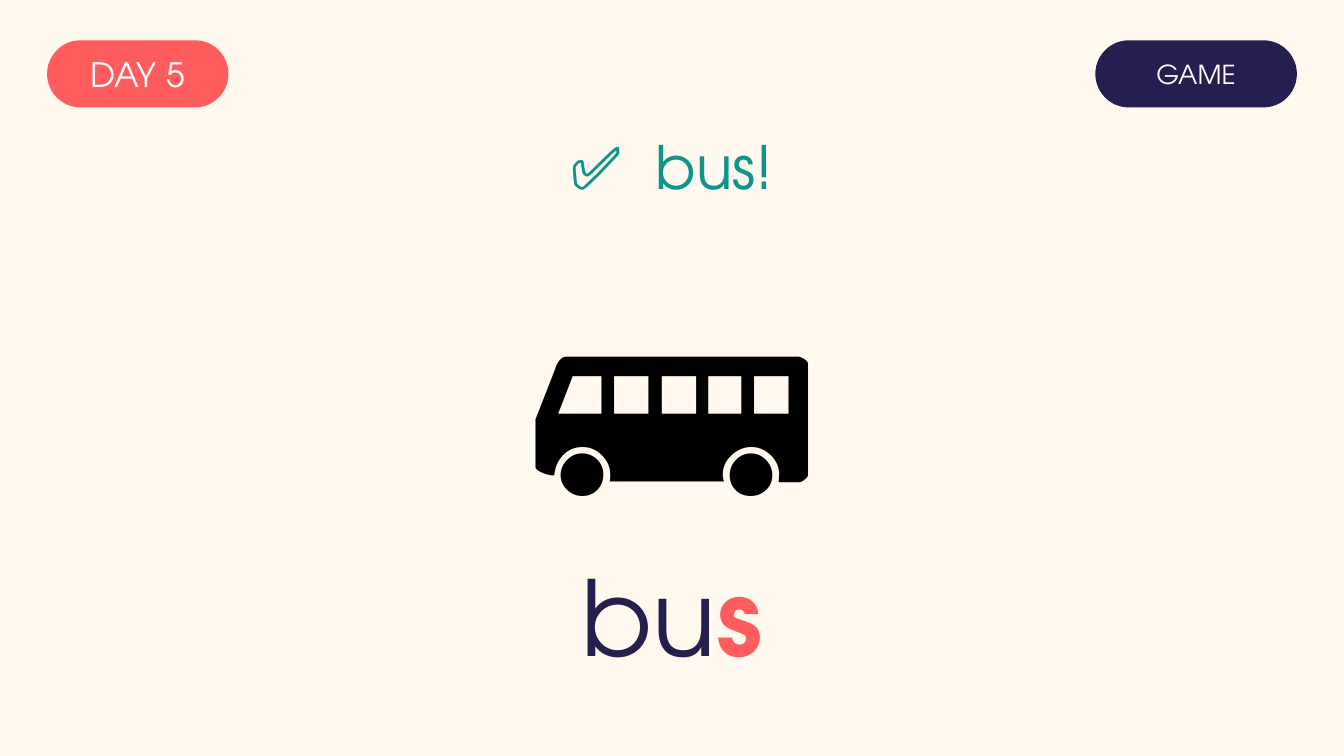
from dataclasses import dataclass

from pptx import Presentation
from pptx.dml.color import RGBColor
from pptx.enum.shapes import MSO_SHAPE
from pptx.enum.text import MSO_ANCHOR, PP_ALIGN
from pptx.slide import Slide
from pptx.text.text import TextFrame
from pptx.util import Emu, Pt

EMU_PER_PX = 4572  # 200 px to the inch
SLIDE_WIDTH, SLIDE_HEIGHT = 2000, 1125

CREAM = RGBColor(0xFF, 0xF9, 0xEF)
CORAL = RGBColor(0xFF, 0x5D, 0x5D)
NAVY = RGBColor(0x24, 0x1F, 0x4E)
TEAL = RGBColor(0x0E, 0x94, 0x88)
WHITE = RGBColor(0xFF, 0xFF, 0xFF)
BLACK = RGBColor(0x00, 0x00, 0x00)

HEADING_FONT = "TeX Gyre Adventor"
EMOJI_FONT = "Calibri"

ROUNDED = MSO_SHAPE.ROUNDED_RECTANGLE
TOP, MIDDLE = MSO_ANCHOR.TOP, MSO_ANCHOR.MIDDLE
CENTER = PP_ALIGN.CENTER


@dataclass(frozen=True)
class Span:
    text: str
    color: RGBColor
    bold: bool = False
    spacing: int = 0  # extra space after each letter, in hundredths of a point


@dataclass(frozen=True)
class Pill:
    left: int
    width: int
    label: str
    size: int
    fill: RGBColor


@dataclass(frozen=True)
class Line:
    """A centred line of text across the full slide width."""
    top: int
    height: int
    size: int
    spans: tuple[Span, ...]
    font: str = HEADING_FONT
    anchor: MSO_ANCHOR = MIDDLE


PILL_TOP, PILL_HEIGHT = 60, 100
PILLS = (
    Pill(70, 270, "DAY 5", 18, CORAL),
    Pill(1630, 300, "GAME", 14, NAVY),
)
LINES = (
    Line(184, 124, 32, (Span("✅", TEAL, spacing=900), Span(" bus!", TEAL))),
    Line(340, 420, 140, (Span("🚌", BLACK),), EMOJI_FONT, TOP),
    Line(830, 170, 56, (Span("bu", NAVY), Span("s", CORAL, bold=True))),
)


def px(length: int) -> Emu:
    return Emu(length * EMU_PER_PX)


def write_spans(frame: TextFrame, spans: tuple[Span, ...], font: str,
                size: int, anchor: MSO_ANCHOR) -> None:
    frame.word_wrap = True
    frame.vertical_anchor = anchor
    para = frame.paragraphs[0]
    para.alignment = CENTER
    para.font.name = font
    para.font.size = Pt(size)
    for span in spans:
        run = para.add_run()
        run.text = span.text
        run.font.name = font
        run.font.size = Pt(size)
        run.font.color.rgb = span.color
        run.font.bold = span.bold
        if span.spacing:
            run.font._element.set("spc", str(span.spacing))


def draw_pill(slide: Slide, pill: Pill) -> None:
    shape = slide.shapes.add_shape(ROUNDED, px(pill.left), px(PILL_TOP),
                                   px(pill.width), px(PILL_HEIGHT))
    shape.adjustments[0] = 0.5
    shape.shadow.inherit = False
    shape.fill.solid()
    shape.fill.fore_color.rgb = pill.fill
    shape.line.fill.background()
    frame = shape.text_frame
    frame.margin_left = frame.margin_right = 0
    frame.margin_top = frame.margin_bottom = 0
    write_spans(frame, (Span(pill.label, WHITE),), HEADING_FONT, pill.size, MIDDLE)


def draw_line(slide: Slide, line: Line) -> None:
    box = slide.shapes.add_textbox(0, px(line.top), px(SLIDE_WIDTH), px(line.height))
    write_spans(box.text_frame, line.spans, line.font, line.size, line.anchor)


def main() -> None:
    deck = Presentation()
    deck.slide_width, deck.slide_height = px(SLIDE_WIDTH), px(SLIDE_HEIGHT)
    slide = deck.slides.add_slide(deck.slide_layouts[6])
    slide.background.fill.solid()
    slide.background.fill.fore_color.rgb = CREAM
    for pill in PILLS:
        draw_pill(slide, pill)
    for line in LINES:
        draw_line(slide, line)
    deck.save("out.pptx")


if __name__ == "__main__":
    main()
